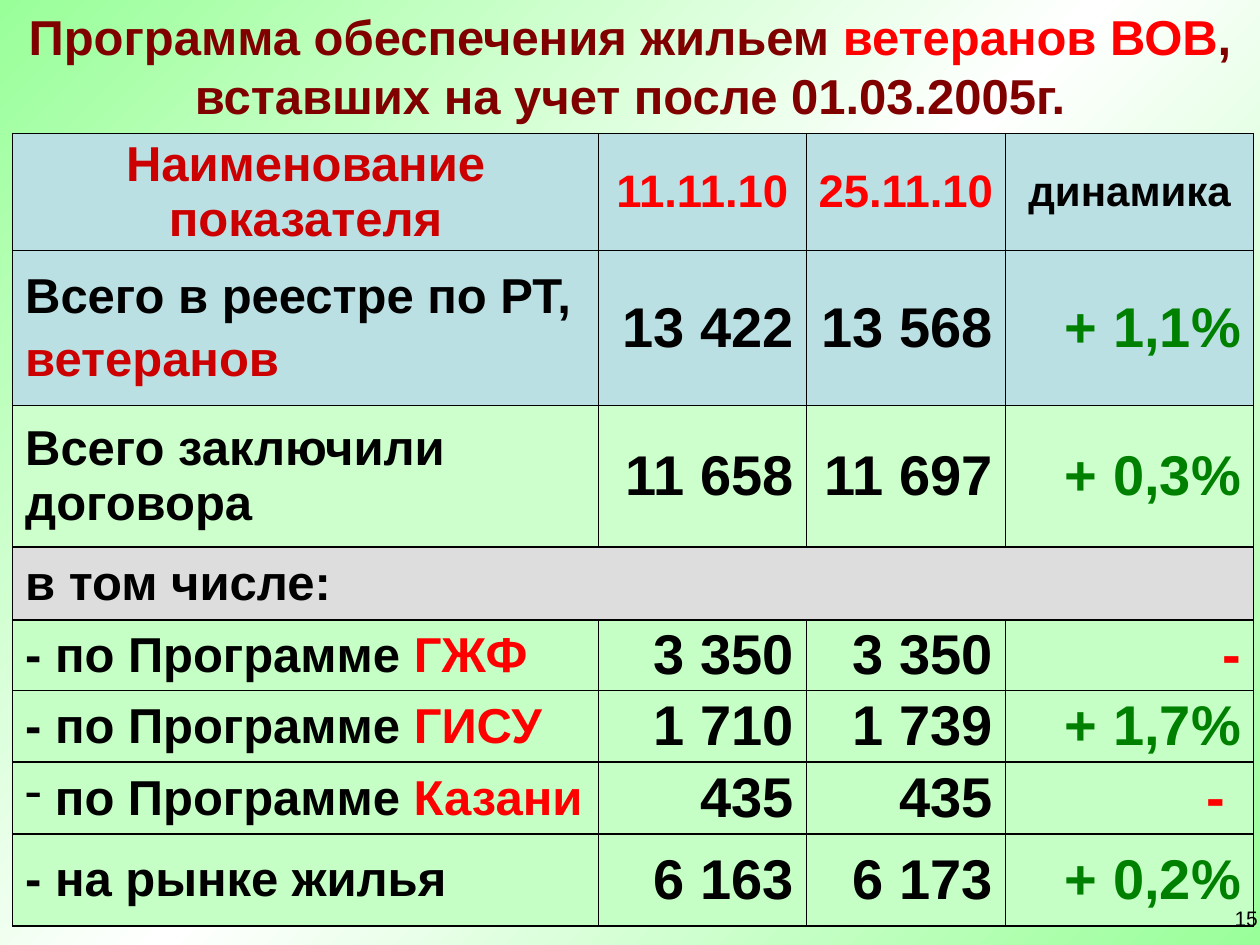
import copy
import pptx
import pptx.util
import pptx.oxml
from pptx.dml.color import RGBColor
from pptx.enum.text import PP_ALIGN, MSO_ANCHOR
from pptx.oxml.ns import nsdecls

Inches, Pt = pptx.util.Inches, pptx.util.Pt
HUES = {
    "mint": "99FF99", "white": "FFFFFF", "black": "000000", "red": "FF0000",
    "brick": "CC0000", "wine": "800000", "green": "008000",
    "blue": "BBE0E3", "pale": "CCFFCC", "lime": "C5FFC5", "grey": "DDDDDD",
}


def hue(name):
    return RGBColor.from_string(HUES[name])


def write(par, size, runs, align=PP_ALIGN.LEFT, bold=True):
    par.alignment = align
    par.font.name, par.font.size, par.font.bold = "Arial", Pt(size), bold
    for text, tint in runs:
        run = par.add_run()
        run.text = text
        run.font.color.rgb = hue(tint)


deck = pptx.Presentation()
deck.slide_width, deck.slide_height = Inches(10), Inches(7.5)
slide = deck.slides.add_slide(deck.slide_layouts[5])

# Background: diagonal mint to white to mint
fill = slide.background.fill
fill.gradient()
fill.gradient_angle = 315
stops = slide._element.xpath(".//a:gsLst")[0]
stops.insert(1, copy.deepcopy(stops[0]))
for stop, place, tint in zip(fill.gradient_stops, (0, 0.5, 1), ("mint", "white", "mint")):
    stop.position = place
    stop.color.rgb = hue(tint)

# Title
title = slide.shapes.title
title.left, title.top = Inches(0), Inches(0)
title.width, title.height = Inches(10), Inches(1.03)
frame = title.text_frame
frame.word_wrap = True
frame.vertical_anchor = MSO_ANCHOR.TOP
write(frame.paragraphs[0], 28, [
    ("Программа обеспечения жильем ", "wine"), ("ветеранов ВОВ", "red"),
    (", вставших на учет после 01.03.2005г.", "wine")], PP_ALIGN.CENTER)

# Table content: fill, label paragraphs, two counts, change and its colour
heads = [("Наименование показателя", 28, "brick", 0.1), ("11.11.10", 26, "red", 0.06),
         ("25.11.10", 26, "red", 0.06), ("динамика", 24, "black", 0.1)]
plan = "- по Программе "
rows = [
    ("blue", [[("Всего в реестре по РТ,", "black")], [("ветеранов", "brick")]],
     "13 422", "13 568", "+ 1,1%", "green"),
    ("pale", [[("Всего заключили договора", "black")]], "11 658", "11 697", "+ 0,3%", "green"),
    ("grey", [[("в том числе:", "black")]], "", "", "", "black"),
    ("lime", [[(plan, "black"), ("ГЖФ", "red")]], "3 350", "3 350", "-", "red"),
    ("lime", [[(plan, "black"), ("ГИСУ", "red")]], "1 710", "1 739", "+ 1,7%", "green"),
    ("lime", [[(plan[1:], "black"), ("Казани", "red")]], "435", "435", "- ", "red"),
    ("lime", [[("- на рынке жилья", "black")]], "6 163", "6 173", "+ 0,2%", "green"),
]
wides = [4.65, 1.65, 1.58, 1.97]
highs = [0.93, 1.23, 1.12, 0.58, 0.56, 0.57, 0.57, 0.73]
table = slide.shapes.add_table(len(highs), len(wides), Inches(0.1), Inches(1.06),
                               Inches(sum(wides)), Inches(sum(highs))).table
table.first_row = table.horz_banding = False
for col, wide in zip(table.columns, wides):
    col.width = Inches(wide)
for row, high in zip(table.rows, highs):
    row.height = Inches(high)

# Borders, fills and margins
tints = ["blue"] + [row[0] for row in rows]
for r, tint in enumerate(tints):
    for c in range(len(wides)):
        cell = table.cell(r, c)
        props = cell._tc.get_or_add_tcPr()
        for side in "LRTB":
            props.append(pptx.oxml.parse_xml(
                f'<a:ln{side} {nsdecls("a")} w="12700"><a:solidFill>'
                f'<a:srgbClr val="{HUES["black"]}"/></a:solidFill></a:ln{side}>'))
        cell.fill.solid()
        cell.fill.fore_color.rgb = hue(tint)
        cell.vertical_anchor = MSO_ANCHOR.MIDDLE
        cell.margin_left = cell.margin_right = Inches(heads[c][3] if r == 0 else 0.1)
        cell.margin_top = cell.margin_bottom = 0

# Header row
for c, (text, size, tint, _) in enumerate(heads):
    write(table.cell(0, c).text_frame.paragraphs[0], size, [(text, tint)], PP_ALIGN.CENTER)

# Body rows
for r, (_, label, old, new, change, tint) in enumerate(rows, 1):
    frame = table.cell(r, 0).text_frame
    for n, runs in enumerate(label):
        par = frame.add_paragraph() if n else frame.paragraphs[0]
        if n:
            par.space_before = Pt(5)
        write(par, 28, runs)
    if not old:
        table.cell(r, 0).merge(table.cell(r, 3))
        continue
    for c, (text, shade) in enumerate([(old, "black"), (new, "black"), (change, tint)], 1):
        write(table.cell(r, c).text_frame.paragraphs[0], 32, [(text, shade)], PP_ALIGN.RIGHT)

# Dash bullet on the city row
props = table.cell(6, 0).text_frame.paragraphs[0]._p.get_or_add_pPr()
props.insert(0, pptx.oxml.parse_xml(f'<a:buChar {nsdecls("a")} char="-"/>'))
props.insert(0, pptx.oxml.parse_xml(f'<a:buFontTx {nsdecls("a")}/>'))

# Page number
box = slide.shapes.add_textbox(Inches(9.7), Inches(7.14), Inches(0.39), Inches(0.3))
box.text_frame.word_wrap = False
write(box.text_frame.paragraphs[0], 12, [("15", "black")], bold=False)

deck.save("out.pptx")
